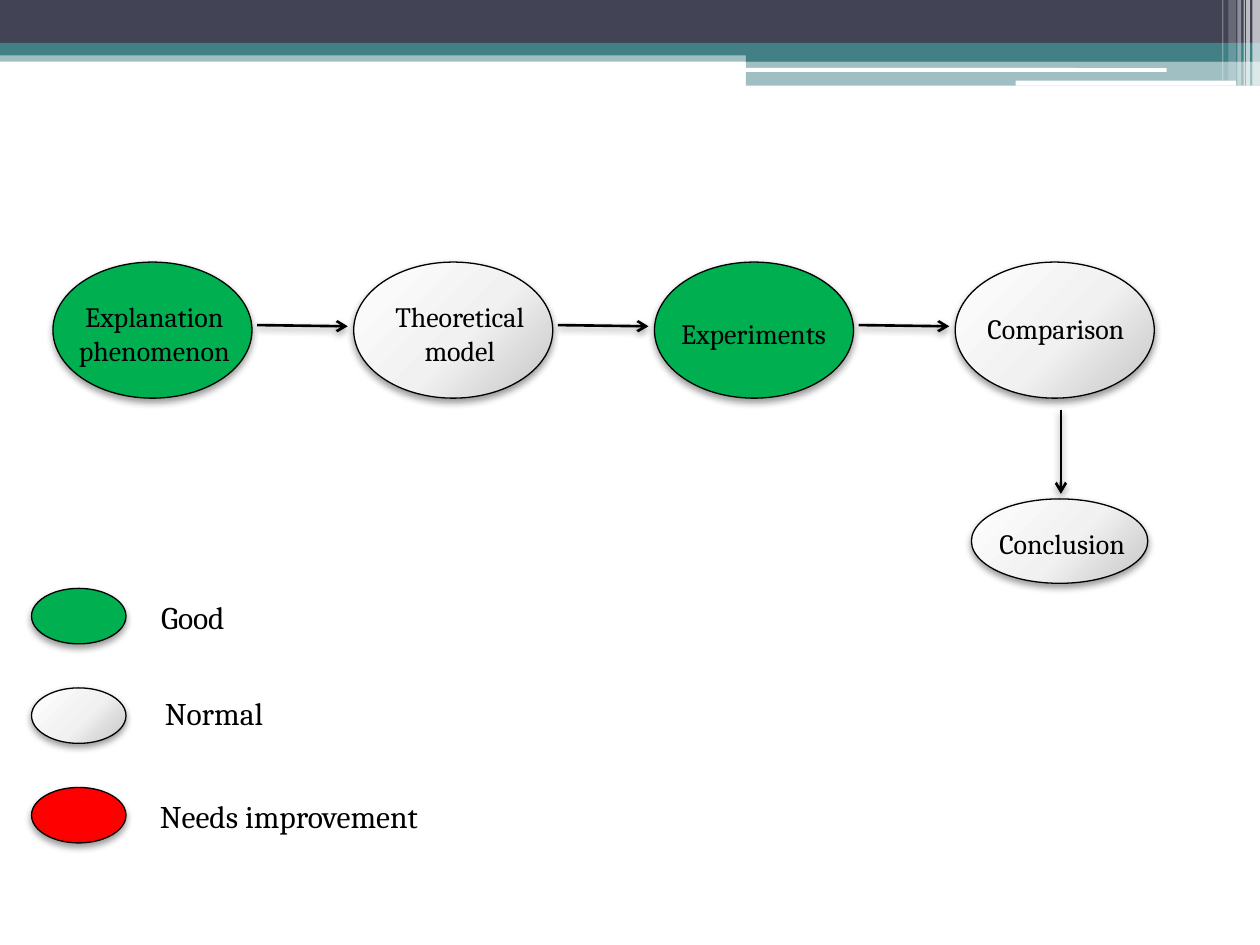
from pptx import Presentation
from pptx.dml.color import RGBColor as RGB
from pptx.enum.shapes import MSO_CONNECTOR as Link, MSO_SHAPE as Kind
from pptx.enum.text import MSO_AUTO_SIZE as Auto, PP_ALIGN as Align
from pptx.oxml import parse_xml
from pptx.oxml.ns import nsdecls, qn
from pptx.util import Inches, Pt
from lxml.etree import SubElement as Sub

HUE = {
    "navy": "424456", "teal": "438086", "white": "FFFFFF", "black": "000000",
    "good": "00B050", "poor": "FF0000",
    "light": "FEFEFE", "mid": "F1F1F1", "dark": "C5C5C5",
}
GRAD = (
    f'<a:gradFill {nsdecls("a")} rotWithShape="1"><a:gsLst>'
    + "".join(
        f'<a:gs pos="{pos}"><a:srgbClr val="{HUE[name]}"/></a:gs>'
        for pos, name in [(0, "light"), (55000, "mid"), (100000, "dark")]
    )
    + '</a:gsLst><a:path path="circle">'
    '<a:fillToRect l="-40000" t="-90000" r="140000" b="190000"/>'
    '</a:path></a:gradFill>'
)
SHADE = (
    f'<a:effectLst {nsdecls("a")}>'
    '<a:outerShdw blurRad="52070" dist="25400" dir="5400000" rotWithShape="0">'
    f'<a:srgbClr val="{HUE["black"]}"><a:alpha val="40000"/></a:srgbClr>'
    '</a:outerShdw></a:effectLst>'
)

deck = Presentation()
deck.slide_width, deck.slide_height = Inches(10), Inches(7.5)
slide = deck.slides.add_slide(deck.slide_layouts[6])
shapes = slide.shapes


def add_oval(box, fill):
    oval = shapes.add_shape(Kind.OVAL, *map(Inches, box))
    oval.fill.solid()
    if fill == "normal":
        solid = oval._element.spPr.find(qn("a:solidFill"))
        solid.getparent().replace(solid, parse_xml(GRAD))
    else:
        oval.fill.fore_color.rgb = RGB.from_string(HUE[fill])
    oval.line.color.rgb = RGB.from_string(HUE["black"])
    oval.line.width = Pt(0.75)
    oval._element.spPr.append(parse_xml(SHADE))


def add_text(box, words, size, align):
    frame = shapes.add_textbox(*map(Inches, box)).text_frame
    frame.word_wrap = True
    frame.auto_size = Auto.SHAPE_TO_FIT_TEXT
    para = frame.paragraphs[0]
    para.alignment = align
    run = para.add_run()
    run.text = words
    run.font.size = Pt(size)
    run.font.name = "Cambria"
    run.font.color.rgb = RGB.from_string(HUE["black"])


bars = [
    (Kind.RECTANGLE, (0, 0.4, 10, 0.09), "teal", 50),
    (Kind.RECTANGLE, (0, 0, 10, 0.34), "navy", 100),
    (Kind.RECTANGLE, (0, 0.34, 10, 0.1), "teal", 100),
    (Kind.RECTANGLE, (5.92, 0.39, 4.08, 0.1), "teal", 100),
    (Kind.RECTANGLE, (5.92, 0.48, 4.08, 0.2), "teal", 50),
    (Kind.ROUNDED_RECTANGLE, (5.91, 0.54, 3.35, 0.03), "white", 100),
    (Kind.ROUNDED_RECTANGLE, (8.06, 0.64, 1.75, 0.04), "white", 100),
    (Kind.RECTANGLE, (9.94, 0, 0.06, 0.68), "white", 65),
    (Kind.RECTANGLE, (9.89, 0, 0.03, 0.68), "white", 65),
    (Kind.RECTANGLE, (9.87, 0, 0.01, 0.68), "white", 60),
    (Kind.RECTANGLE, (9.82, 0, 0.03, 0.68), "white", 40),
    (Kind.RECTANGLE, (9.75, 0, 0.06, 0.64), "white", 20),
    (Kind.RECTANGLE, (9.7, 0, 0.01, 0.64), "white", 30),
]
for kind, box, hue, alpha in bars:
    bar = shapes.add_shape(kind, *map(Inches, box))
    bar.shadow.inherit = False
    bar.line.fill.background()
    bar.fill.solid()
    bar.fill.fore_color.rgb = RGB.from_string(HUE[hue])
    if alpha < 100:
        color = bar._element.spPr.find(qn("a:solidFill"))[0]
        Sub(color, qn("a:alpha")).set("val", str(alpha * 1000))

left, step = 0.42, 2.387
steps = [
    ("Explanation phenomenon", "good", (0.45, 2.33, 1.55, 0.64)),
    ("Theoretical model", "normal", (2.97, 2.33, 1.36, 0.64)),
    ("Experiments", "good", (5.19, 2.46, 1.58, 0.37)),
    ("Comparison", "normal", (7.62, 2.42, 1.52, 0.37)),
]
for i, (words, fill, box) in enumerate(steps):
    add_oval((left + i * step, 2.08, 1.58, 1.08), fill)
    add_text(box, words, 16, Align.CENTER)

add_oval((7.71, 3.96, 1.4, 0.67), "normal")
add_text((7.71, 4.13, 1.44, 0.37), "Conclusion", 16, Align.CENTER)

legend = [
    ("Good", "good", (1.18, 4.7, 1.07, 0.4)),
    ("Normal", "normal", (1.21, 5.46, 2.04, 0.4)),
    ("Needs improvement", "poor", (1.17, 6.28, 3.75, 0.4)),
]
for i, (words, fill, box) in enumerate(legend):
    add_oval((0.25, 4.67 + i * 0.79, 0.75, 0.44), fill)
    add_text(box, words, 18, Align.LEFT)

lines = [(2.04 + i * step, 2.58, 2.76 + i * step, 2.59) for i in range(3)]
for ends in lines + [(8.42, 3.25, 8.42, 3.92)]:
    line = shapes.add_connector(Link.STRAIGHT, *map(Inches, ends))
    line.line.color.rgb = RGB.from_string(HUE["black"])
    line.line.width = Pt(1.5)
    props = line._element.spPr
    Sub(props.find(qn("a:ln")), qn("a:tailEnd")).set("type", "arrow")
    props.append(parse_xml(SHADE))

deck.save("out.pptx")
